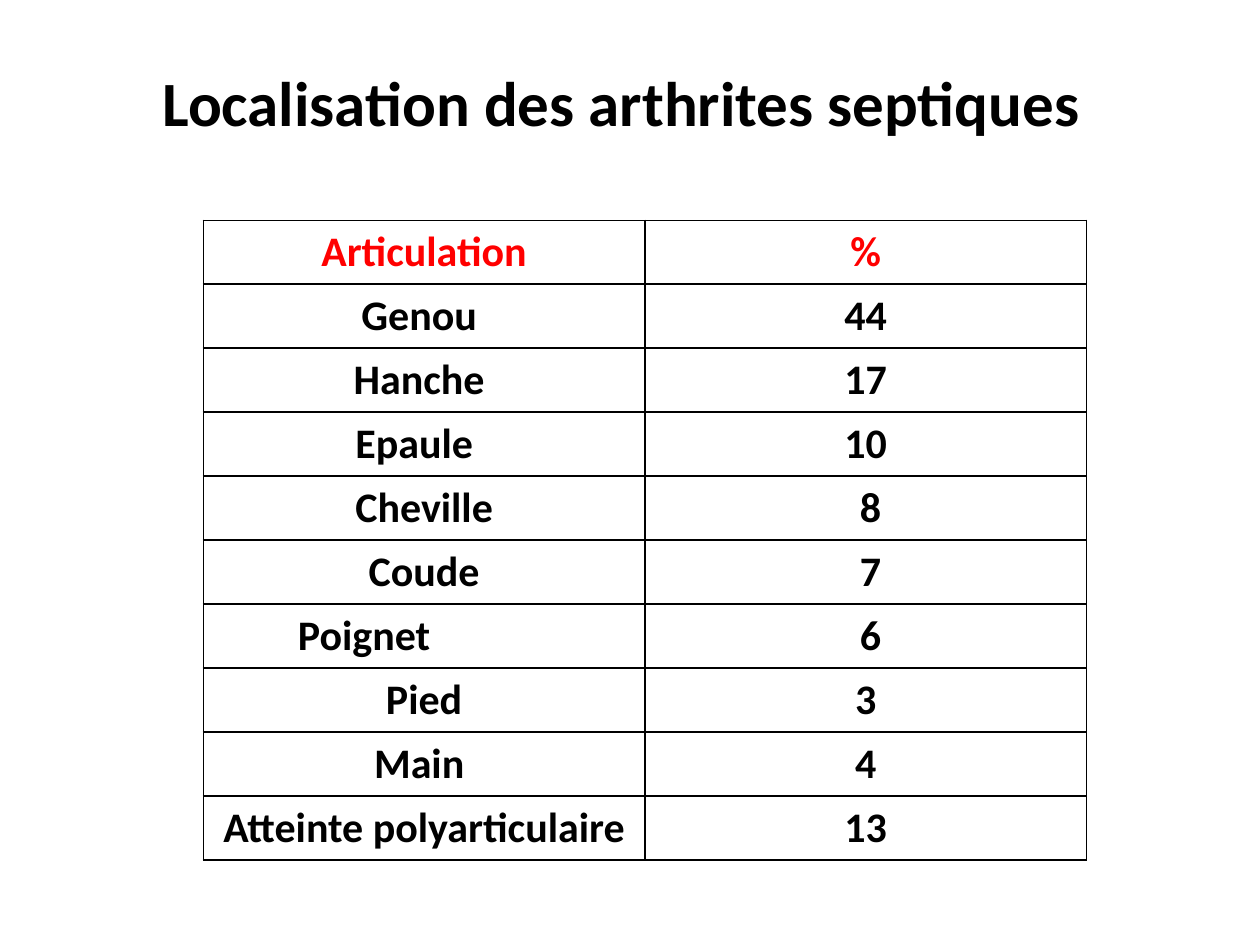
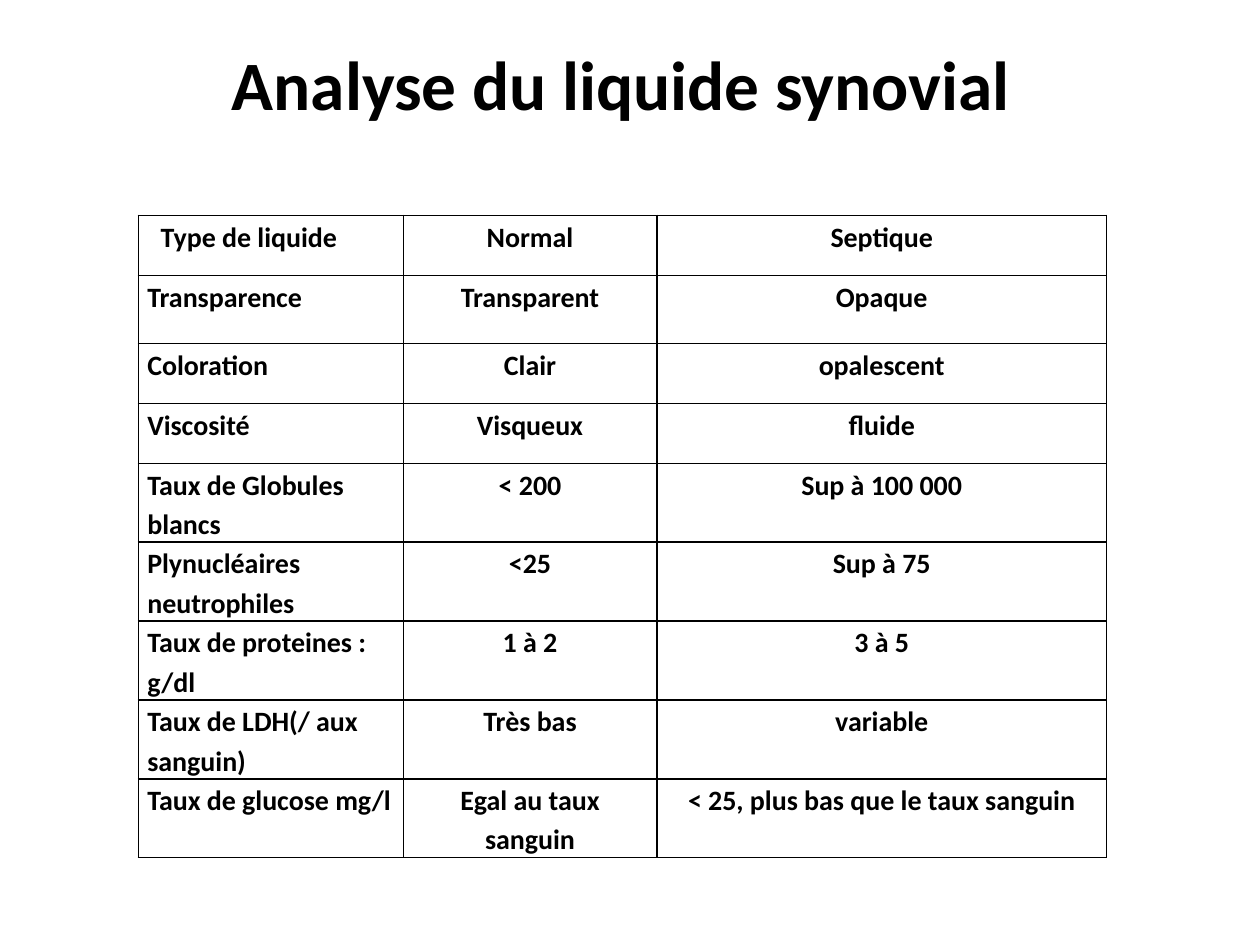
"""Two slides of tables on septic arthritis: joints affected and synovial fluid."""
from dataclasses import dataclass

from lxml.etree import SubElement
from pptx import Presentation
from pptx.dml.color import RGBColor as RGB
from pptx.enum.text import MSO_ANCHOR as ANCHOR, PP_ALIGN as ALIGN
from pptx.oxml.ns import qn
from pptx.util import Cm, Pt


@dataclass(frozen=True)
class Theme:
    font: str = "Calibri"
    ink: RGB = RGB(0, 0, 0)
    accent: RGB = RGB(255, 0, 0)
    border: int = Pt(1)
    joint_title: float = 36
    fluid_title: float = 39.6
    joint_text: float = 24
    fluid_text: float = 16


T = Theme()


def set_text(tf, text, size, color=T.ink, align=ALIGN.CENTER):
    p = tf.paragraphs[0]
    p.text = text
    p.alignment = align
    p.font.name, p.font.size, p.font.bold = T.font, Pt(size), True
    p.font.color.rgb = color
    return p


def add_titled_table(title, title_size, title_height, left, top, widths, heights):
    s = prs.slides.add_slide(prs.slide_layouts[6])
    tf = s.shapes.add_textbox(Cm(1.27), Cm(0.76), Cm(22.86), Cm(title_height)).text_frame
    tf.word_wrap = True
    tf.vertical_anchor = ANCHOR.MIDDLE
    tf.margin_right = Cm(0.6)
    set_text(tf, title, title_size)

    table = s.shapes.add_table(len(heights), len(widths), Cm(left), Cm(top),
                               Cm(sum(widths)), Cm(sum(heights))).table
    table.first_row = table.horz_banding = False
    for column, width in zip(table.columns, widths):
        column.width = Cm(width)
    for row, height in zip(table.rows, heights):
        row.height = Cm(height)
    for cell in table.iter_cells():
        tc_pr = cell._tc.get_or_add_tcPr()
        for side in ("a:lnL", "a:lnR", "a:lnT", "a:lnB"):
            line = SubElement(tc_pr, qn(side), w=str(T.border))
            fill = SubElement(line, qn("a:solidFill"))
            SubElement(fill, qn("a:srgbClr"), val=str(T.ink))
        cell.fill.background()
    return table


prs = Presentation()
prs.slide_width, prs.slide_height = Cm(25.4), Cm(19.05)

joints = [
    ("Articulation", "%"),
    ("Genou", "44"),
    ("Hanche", "17"),
    ("Epaule", "10"),
    ("Cheville", "8"),
    ("Coude", "7"),
    ("Poignet", "6"),
    ("Pied", "3"),
    ("Main", "4"),
    ("Atteinte polyarticulaire", "13"),
]
extra_right = {"Genou": 0.2, "Hanche": 0.2, "Epaule": 0.4, "Poignet": 2.42, "Main": 0.2}
extra_left = {"8": 0.2, "7": 0.2, "6": 0.2}

table = add_titled_table("Localisation des arthrites septiques", T.joint_title, 2.57,
                         4.1, 4.44, [8.9] * 2, [1.29] * len(joints))
for r, row in enumerate(joints):
    for c, text in enumerate(row):
        cell = table.cell(r, c)
        cell.margin_left = Cm(0.25 + extra_left.get(text, 0))
        cell.margin_right = Cm(0.25 + extra_right.get(text, 0))
        set_text(cell.text_frame, text, T.joint_text, T.ink if r else T.accent)

fluids = [
    ("Type de liquide", "Normal", "Septique"),
    ("Transparence", "Transparent", "Opaque"),
    ("Coloration", "Clair", "opalescent"),
    ("Viscosité", "Visqueux", "fluide"),
    ("Taux de Globules blancs", "< 200", "Sup à 100 000"),
    ("Plynucléaires neutrophiles", "<25", "Sup à 75"),
    ("Taux de proteines : g/dl", "1 à 2", "3 à 5"),
    ("Taux de LDH(/ aux sanguin)", "Très bas", "variable"),
    ("Taux de glucose mg/l", "Egal au taux sanguin", "< 25, plus bas que le taux sanguin"),
]

table = add_titled_table("Analyse du liquide synovial", T.fluid_title, 1.83,
                         2.79, 4.34, [5.34, 5.11, 9.07],
                         [1.21, 1.37, 1.21, 1.21] + [1.59] * 5)
for r, row in enumerate(fluids):
    for c, text in enumerate(row):
        cell = table.cell(r, c)
        cell.margin_left = cell.margin_right = Cm(0.18)
        cell.margin_top = cell.margin_bottom = 0
        p = set_text(cell.text_frame, text, T.fluid_text,
                     align=ALIGN.CENTER if c else ALIGN.LEFT)
        p.line_spacing = 1.15
        p.space_after = Pt(10)
table.cell(0, 0).margin_left = Cm(0.45)

prs.save("out.pptx")
